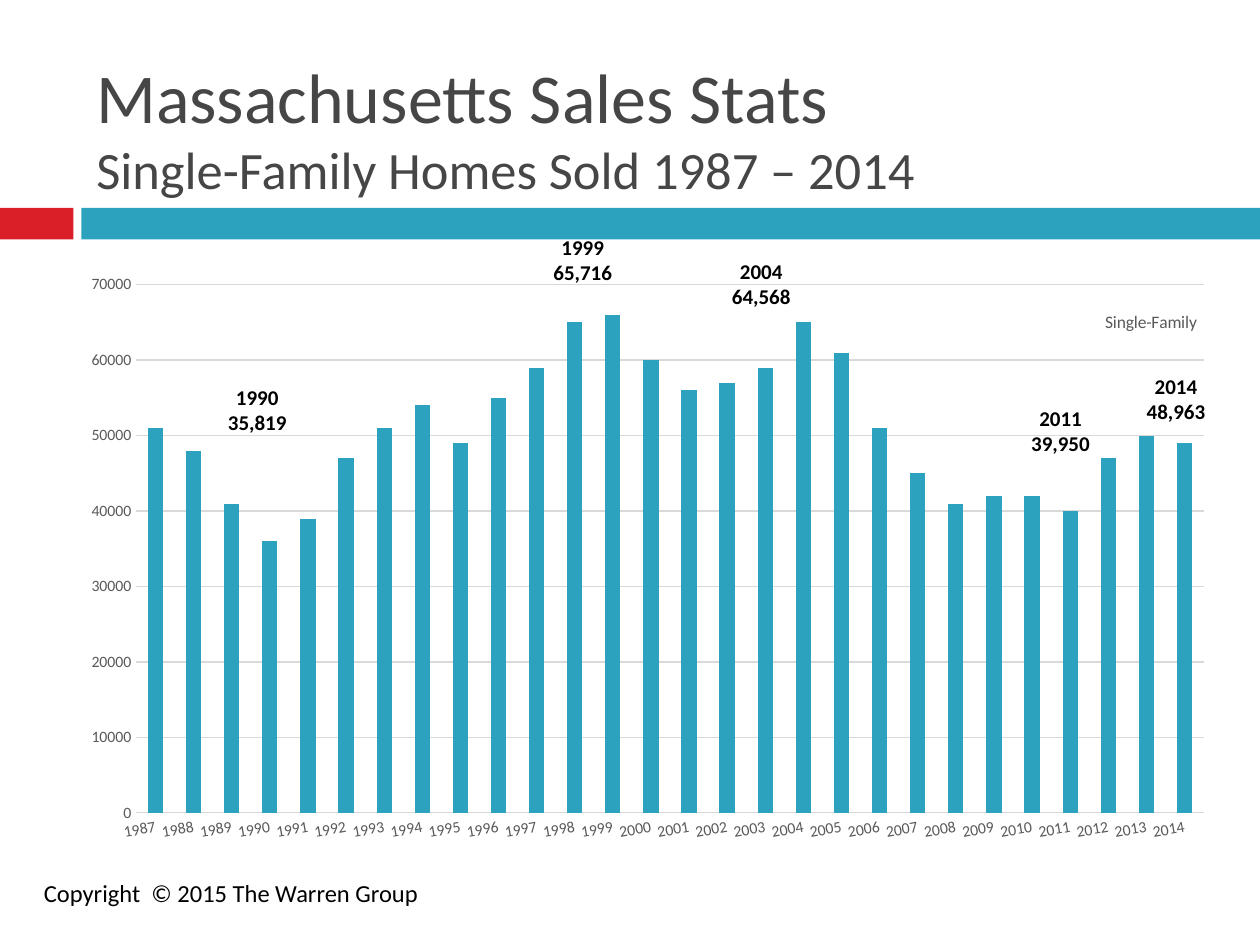
"""Build a slide charting Massachusetts single-family home sales by year."""
from dataclasses import dataclass

from lxml import etree
from pptx import Presentation
from pptx.chart.data import CategoryChartData
from pptx.dml.color import RGBColor
from pptx.enum.chart import XL_CHART_TYPE, XL_TICK_MARK
from pptx.enum.shapes import MSO_SHAPE
from pptx.enum.text import MSO_ANCHOR, PP_ALIGN
from pptx.oxml import parse_xml
from pptx.oxml.ns import nsdecls
from pptx.util import Inches, Pt

COLUMNS = XL_CHART_TYPE.COLUMN_CLUSTERED
NO_TICK = XL_TICK_MARK.NONE
RECTANGLE = MSO_SHAPE.RECTANGLE
TOP, BOTTOM = MSO_ANCHOR.TOP, MSO_ANCHOR.BOTTOM
LEFT, CENTER = PP_ALIGN.LEFT, PP_ALIGN.CENTER


@dataclass(frozen=True)
class Theme:
    """Colours, font and type sizes of the slide."""
    font: str = "Calibri"
    red: str = "DA1F28"
    teal: str = "2DA2BF"
    heading: str = "464646"
    ink: str = "000000"
    axis: str = "595959"
    grid: str = "D9D9D9"
    title_size: int = 40
    subtitle_size: int = 30
    footer_size: int = 14
    label_size: int = 12
    chart_size: int = 10
    axis_size: int = 9


THEME = Theme()
SLIDE_WIDTH, SLIDE_HEIGHT = Inches(10), Inches(7.5)
GRID_COLUMNS, GRID_ROWS = 120, 90
FIRST_YEAR = 1987
SALES = [51000, 48000, 41000, 36000, 39000, 47000, 51000, 54000, 49000, 55000,
         59000, 65000, 66000, 60000, 56000, 57000, 59000, 65000, 61000, 51000,
         45000, 41000, 42000, 42000, 40000, 47000, 50000, 49000]
LABELS = [("1990", "35,819", (20, 36, 9, 6)),
          ("1999", "65,716", (49.5, 21.75, 12, 6)),
          ("2004", "64,568", (68, 24, 9, 6)),
          ("2011", "39,950", (96, 38, 10, 6)),
          ("2014", "48,963", (106, 34.95, 12, 6))]


def place(column, row, columns, rows):
    """Turn grid cells into left, top, width and height."""
    return (int(SLIDE_WIDTH * column / GRID_COLUMNS),
            int(SLIDE_HEIGHT * row / GRID_ROWS),
            int(SLIDE_WIDTH * columns / GRID_COLUMNS),
            int(SLIDE_HEIGHT * rows / GRID_ROWS))


def style_font(font, size, color, bold=False):
    """Give a font the theme typeface with a size and colour."""
    font.name = THEME.font
    font.size = Pt(size)
    font.bold = bold
    font.color.rgb = RGBColor.from_string(color)


def add_band(page, cells, color):
    """Add a plain filled rectangle."""
    band = page.shapes.add_shape(RECTANGLE, *place(*cells))
    band.shadow.inherit = False
    band.fill.solid()
    band.fill.fore_color.rgb = RGBColor.from_string(color)
    band.line.fill.background()


def add_box(page, cells, anchor=TOP):
    """Add an empty wrapping text box and return its frame."""
    frame = page.shapes.add_textbox(*place(*cells)).text_frame
    frame.word_wrap = True
    frame.vertical_anchor = anchor
    return frame


def add_span(para, text, size, color):
    """Add formatted text to a paragraph."""
    span = para.add_run()
    span.text = text
    style_font(span.font, size, color)


def add_text(page, cells, lines, size, bold=False, align=LEFT):
    """Add a text box with one paragraph for each line."""
    frame = add_box(page, cells)
    frame.text = "\n".join(lines)
    for para in frame.paragraphs:
        para.alignment = align
        style_font(para.runs[0].font, size, THEME.ink, bold)


def add_heading(page):
    """Add the title and its smaller second line."""
    para = add_box(page, (8, 2, 107, 17.65), BOTTOM).paragraphs[0]
    add_span(para, "Massachusetts Sales Stats", THEME.title_size, THEME.heading)
    para.add_line_break()
    add_span(para, "Single-Family Homes Sold 1987 – 2014",
             THEME.subtitle_size, THEME.heading)


def make_layout(**percents):
    """Make a manual chart layout from percentages of the chart's size."""
    values = {"xMode": "edge", "yMode": "edge"}
    if "w" in percents:
        values = {"layoutTarget": "inner", **values}
    values.update({tag: percent / 100 for tag, percent in percents.items()})
    parts = "".join(f'<c:{tag} val="{value}"/>' for tag, value in values.items())
    return parse_xml(f'<c:layout {nsdecls("c")}><c:manualLayout>{parts}'
                     '</c:manualLayout></c:layout>')


def remove_layout(element):
    """Remove any layout that a chart element already has."""
    for old in element.findall("{*}layout"):
        element.remove(old)


def style_line(line):
    """Draw a thin line in the grid colour."""
    line.color.rgb = RGBColor.from_string(THEME.grid)
    line.width = Pt(0.75)


def style_axes(chart):
    """Format both axes, the gridlines and the tilted years."""
    for axis in (chart.category_axis, chart.value_axis):
        axis.major_tick_mark = axis.minor_tick_mark = NO_TICK
        style_font(axis.tick_labels.font, THEME.axis_size, THEME.axis)
    style_line(chart.category_axis.format.line)
    body = chart.category_axis._element.txPr.bodyPr
    body.set("rot", "-600000")
    body.set("vert", "horz")
    values = chart.value_axis
    values.minimum_scale, values.maximum_scale, values.major_unit = 0, 70000, 10000
    values.format.line.fill.background()
    style_line(values.major_gridlines.format.line)


def set_chart_title(chart, text):
    """Title the chart inside the plot at the upper right."""
    chart.has_title = True
    title = chart.chart_title
    add_span(title.text_frame.paragraphs[0], text, THEME.chart_size, THEME.axis)
    title.include_in_layout = True
    remove_layout(title._element)
    title._element.find("{*}tx").addnext(make_layout(x=89.5, y=7.5))


def add_sales_chart(page):
    """Add the column chart of yearly sales."""
    data = CategoryChartData(number_format="General")
    data.categories = [str(FIRST_YEAR + index) for index in range(len(SALES))]
    data.add_series("Single-Family", SALES)
    chart = page.shapes.add_chart(COLUMNS, *place(6.5, 24.8, 110, 59.6), data).chart
    style_font(chart.font, THEME.chart_size, THEME.ink)
    chart.has_legend = False
    plot = chart.plots[0]
    plot.gap_width = 150
    plot.vary_by_categories = False
    fill = plot.series[0].format.fill
    fill.solid()
    fill.fore_color.rgb = RGBColor.from_string(THEME.teal)
    style_axes(chart)
    set_chart_title(chart, "Single-Family")
    area = chart._chartSpace.chart.plotArea
    remove_layout(area)
    area.insert(0, make_layout(x=5.9, y=3.9, w=92.4, h=84.4))
    clear = parse_xml(f'<c:spPr {nsdecls("c", "a")}/>')
    for tag in ("noFill", "ln"):
        etree.SubElement(clear, f"{{{clear.nsmap['a']}}}{tag}")
    etree.SubElement(clear[1], clear[0].tag)
    chart._chartSpace.chart.addnext(clear)


def main():
    """Build and save the slide."""
    deck = Presentation()
    deck.slide_width, deck.slide_height = SLIDE_WIDTH, SLIDE_HEIGHT
    page = deck.slides.add_slide(deck.slide_layouts[6])
    add_band(page, (0, 19.8, 7, 3), THEME.red)
    add_band(page, (7.75, 19.8, 112.25, 3), THEME.teal)
    add_heading(page)
    add_sales_chart(page)
    for year, amount, cells in LABELS:
        add_text(page, cells, [year, amount], THEME.label_size,
                 bold=True, align=CENTER)
    add_text(page, (3, 83, 48, 4.1), ["Copyright  © 2015 The Warren Group"],
             THEME.footer_size)
    deck.save("out.pptx")


if __name__ == "__main__":
    main()
